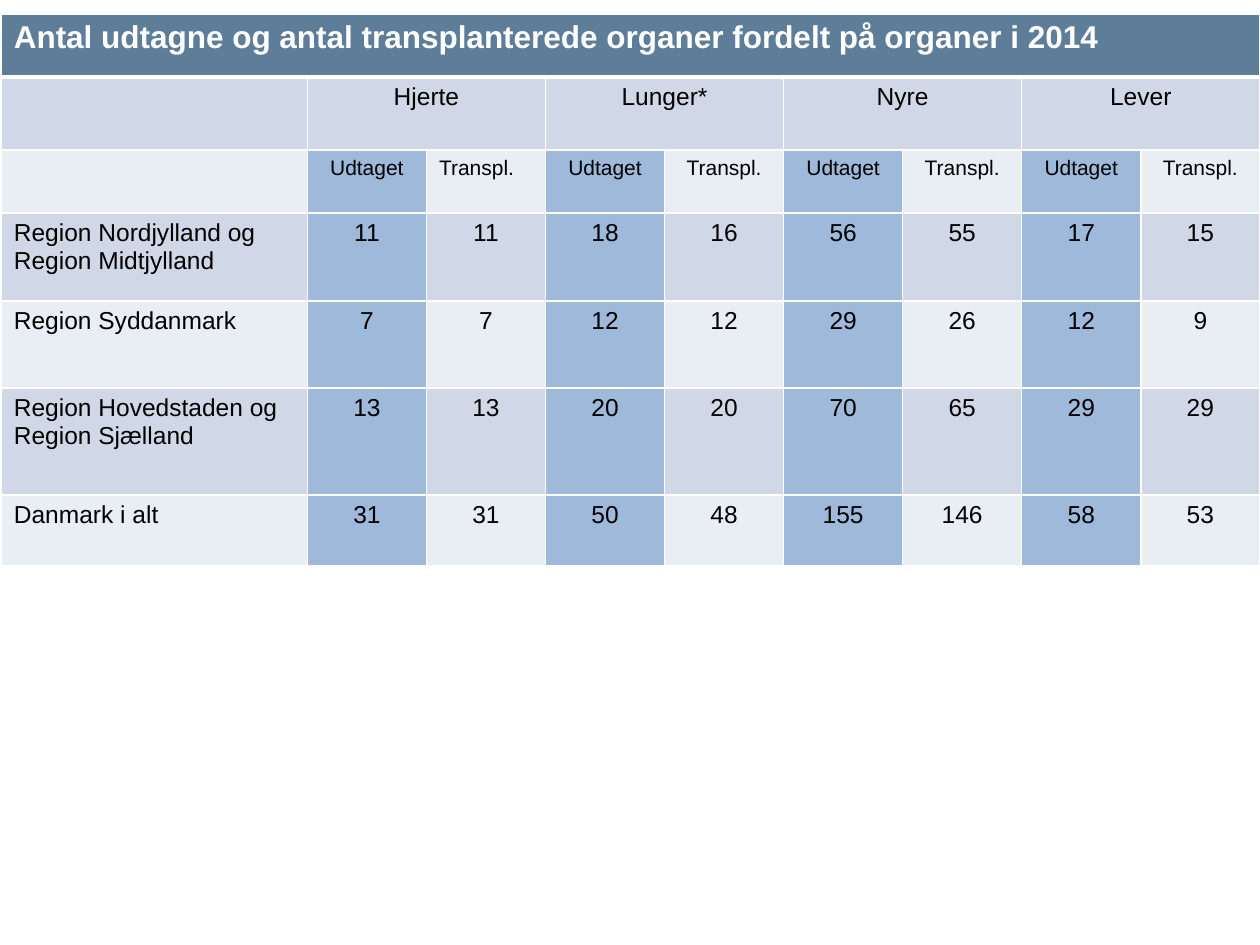
from dataclasses import dataclass

from lxml.etree import SubElement
from pptx import Presentation
from pptx.dml.color import RGBColor
from pptx.enum.text import PP_ALIGN
from pptx.oxml.ns import qn
from pptx.table import Table, _Cell
from pptx.util import Inches, Pt

FONT = "Arial"
WHITE, BLACK = "FFFFFF", "000000"
TITLE_FILL, REMOVED_FILL = "5D7D98", "9EB9DA"
BAND_FILLS = ("D0D8E8", "E9EDF4")

TITLE = "Antal udtagne og antal transplanterede organer fordelt på organer i 2014"
ORGANS = ("Hjerte", "Lunger*", "Nyre", "Lever")
MEASURES = ("Udtaget", "Transpl.")
FIRST_REGION_ROW = 3
COLUMN_WIDTHS = [2.43] + [0.945] * (len(ORGANS) * len(MEASURES))
ROW_HEIGHTS = [0.5, 0.58, 0.5, 0.7, 0.69, 0.85, 0.56]


@dataclass(frozen=True)
class Region:
    name: str
    counts: tuple[int, ...]


REGIONS = (
    Region("Region Nordjylland og Region Midtjylland", (11, 11, 18, 16, 56, 55, 17, 15)),
    Region("Region Syddanmark", (7, 7, 12, 12, 29, 26, 12, 9)),
    Region("Region Hovedstaden og Region Sjælland", (13, 13, 20, 20, 70, 65, 29, 29)),
    Region("Danmark i alt", (31, 31, 50, 48, 155, 146, 58, 53)),
)


def color(value: str) -> RGBColor:
    return RGBColor.from_string(value)


def write(cell: _Cell, text: str, *, size: int = 14, bold: bool = False,
          text_color: str = BLACK, align: PP_ALIGN = PP_ALIGN.CENTER) -> None:
    paragraph = cell.text_frame.paragraphs[0]
    paragraph.alignment = align
    run = paragraph.add_run()
    run.text = text
    run.font.name = FONT
    run.font.size = Pt(size)
    run.font.bold = bold
    run.font.color.rgb = color(text_color)


def set_borders(cell: _Cell, **widths: float) -> None:
    """Draw white borders, 1 point wide unless a side (L, R, T, B) is given."""
    properties = cell._tc.get_or_add_tcPr()
    for side in "LRTB":
        line = SubElement(properties, qn(f"a:ln{side}"), w=str(Pt(widths.get(side, 1))))
        fill = SubElement(line, qn("a:solidFill"))
        SubElement(fill, qn("a:srgbClr"), val=WHITE)


def cell_fill(row: int, column: int) -> str:
    if row == 0:
        return TITLE_FILL
    if row > 1 and column % 2 == 1:
        return REMOVED_FILL
    return BAND_FILLS[(row - 1) % 2]


def style_cells(table: Table) -> None:
    under_title = {0: {"B": 3}, 1: {"T": 3}}
    for row in range(len(ROW_HEIGHTS)):
        for column in range(len(COLUMN_WIDTHS)):
            cell = table.cell(row, column)
            set_borders(cell, **under_title.get(row, {}))
            cell.fill.solid()
            cell.fill.fore_color.rgb = color(cell_fill(row, column))


def fill_headings(table: Table) -> None:
    title_cell = table.cell(0, 0)
    title_cell.merge(table.cell(0, len(COLUMN_WIDTHS) - 1))
    write(title_cell, TITLE, size=18, bold=True, text_color=WHITE, align=PP_ALIGN.LEFT)
    for index, organ in enumerate(ORGANS):
        first = 1 + index * len(MEASURES)
        organ_cell = table.cell(1, first)
        organ_cell.merge(table.cell(1, first + len(MEASURES) - 1))
        write(organ_cell, organ)
        for column, measure in enumerate(MEASURES, first):
            align = PP_ALIGN.LEFT if column == 2 else PP_ALIGN.CENTER
            write(table.cell(2, column), measure, size=12, align=align)


def fill_regions(table: Table) -> None:
    for row, region in enumerate(REGIONS, FIRST_REGION_ROW):
        write(table.cell(row, 0), region.name, align=PP_ALIGN.LEFT)
        for column, count in enumerate(region.counts, 1):
            write(table.cell(row, column), str(count))


def main() -> None:
    presentation = Presentation()
    presentation.slide_width, presentation.slide_height = Inches(10), Inches(7.5)
    slide = presentation.slides.add_slide(presentation.slide_layouts[6])
    table = slide.shapes.add_table(
        len(ROW_HEIGHTS), len(COLUMN_WIDTHS), Inches(0.01), Inches(0.11),
        Inches(sum(COLUMN_WIDTHS)), Inches(sum(ROW_HEIGHTS))).table
    for column, width in zip(table.columns, COLUMN_WIDTHS):
        column.width = Inches(width)
    for row, height in zip(table.rows, ROW_HEIGHTS):
        row.height = Inches(height)
    style_cells(table)
    fill_headings(table)
    fill_regions(table)
    presentation.save("out.pptx")


if __name__ == "__main__":
    main()
